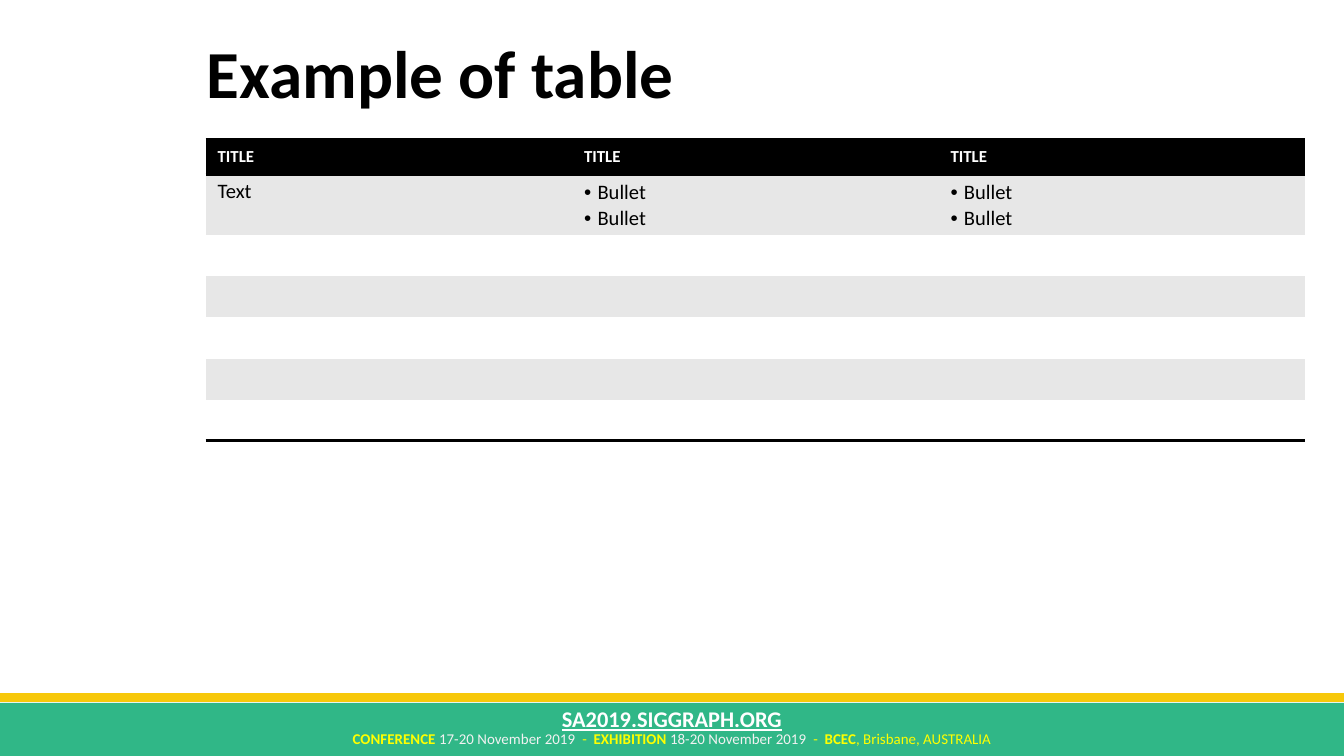
"""Build the table example slide with its conference footer."""
import pptx
import pptx.dml.color
import pptx.enum.shapes
import pptx.enum.text
import pptx.oxml
import pptx.oxml.ns
import pptx.util
from lxml import etree

RGBColor = pptx.dml.color.RGBColor
Inches = pptx.util.Inches
Pt = pptx.util.Pt
qn = pptx.oxml.ns.qn
MIDDLE = pptx.enum.text.MSO_ANCHOR.MIDDLE
CENTER = pptx.enum.text.PP_ALIGN.CENTER

BLACK = RGBColor(0x00, 0x00, 0x00)
WHITE = RGBColor(0xFF, 0xFF, 0xFF)
BAND = RGBColor(0xE7, 0xE7, 0xE7)
GREEN = RGBColor(0x30, 0xB7, 0x87)
GOLD = RGBColor(0xF7, 0xC8, 0x0A)
YELLOW = RGBColor(0xFF, 0xFF, 0x00)
PALE = RGBColor(0xF2, 0xF2, 0xF2)
PLAIN_TABLE = "{2D5ABB26-0587-4C30-8999-92F81FD0307C}"


def write(paragraph, text, size=11, color=BLACK, bold=False, underline=None, bullet=False):
    if bullet:
        properties = paragraph._p.get_or_add_pPr()
        properties.set("marL", str(Inches(0.1)))
        properties.set("indent", str(-Inches(0.1)))
        etree.SubElement(properties, qn("a:buFont")).set("typeface", "Arial")
        etree.SubElement(properties, qn("a:buChar")).set("char", "•")
    run = paragraph.add_run()
    run.text = text
    run.font.name = "Calibri"
    run.font.size = Pt(size)
    run.font.bold = bold
    run.font.underline = underline
    run.font.color.rgb = color


def add_border(cell, side):
    border = pptx.oxml.parse_xml(
        f'<a:{side} {pptx.oxml.ns.nsdecls("a")} w="{Pt(2)}">'
        f'<a:solidFill><a:srgbClr val="{BLACK}"/></a:solidFill></a:{side}>')
    properties = cell._tc.get_or_add_tcPr()
    properties.insert(len(properties.findall(qn("a:lnT"))), border)


deck = pptx.Presentation()
deck.slide_width = Inches(10)
deck.slide_height = deck.slide_width * 9 // 16
slide = deck.slides.add_slide(deck.slide_layouts[5])
shapes = slide.shapes

heading = shapes.title
heading.left, heading.top = Inches(1.54), Inches(0.22)
heading.width, heading.height = Inches(8.18), Inches(0.7)
heading_frame = heading.text_frame
heading_frame.margin_left = heading_frame.margin_right = 0
heading_frame.margin_top = heading_frame.margin_bottom = 0
heading_frame.vertical_anchor = MIDDLE
heading_frame.paragraphs[0].alignment = pptx.enum.text.PP_ALIGN.LEFT
heading_frame.paragraphs[0].line_spacing = 0.9
write(heading_frame.paragraphs[0], "Example of table", size=36, bold=True)

band_top = Inches(5.23)
footer_band = shapes.add_shape(pptx.enum.shapes.MSO_SHAPE.RECTANGLE, 0, band_top,
                               deck.slide_width, deck.slide_height - band_top)
footer_band.shadow.inherit = False
footer_band.fill.solid()
footer_band.fill.fore_color.rgb = GREEN
footer_band.line.fill.background()

dates = [
    ("CONFERENCE ", YELLOW, True), ("17-20 November 2019", PALE, False),
    ("  -  ", YELLOW, False), ("EXHIBITION ", YELLOW, True),
    ("18-20 November 2019  ", PALE, False), ("-  ", YELLOW, False),
    ("BCEC", YELLOW, True), (", Brisbane, AUSTRALIA", YELLOW, False),
]
address = [("SA2019.SIGGRAPH.ORG", WHITE, True)]
for top, height, size, underline, pieces in [(5.38, 0.24, 8, None, dates),
                                             (5.2, 0.3, 12, True, address)]:
    footer_line = shapes.add_textbox(Inches(0.28), Inches(top), Inches(9.44), Inches(height))
    footer_line.text_frame.word_wrap = True
    footer_line.text_frame.paragraphs[0].alignment = CENTER
    for text, color, bold in pieces:
        write(footer_line.text_frame.paragraphs[0], text, size=size, color=color,
              bold=bold, underline=underline)

gold_rule = shapes.add_connector(pptx.enum.shapes.MSO_CONNECTOR.STRAIGHT,
                                 0, Inches(5.19), deck.slide_width, Inches(5.19))
gold_rule.line.color.rgb = GOLD
gold_rule.line.width = Pt(5)
etree.SubElement(gold_rule._element.spPr, qn("a:effectLst"))

table_height, header_height, text_height = 2.24, 0.26, 0.45
empty_height = (table_height - header_height - text_height) / 5
row_heights = [header_height, text_height] + [empty_height] * 5
content = [["TITLE"] * 3, ["Text", "Bullet\nBullet", "Bullet\nBullet"]] + [[""] * 3] * 5
example = shapes.add_table(len(content), 3, Inches(1.53), Inches(1.04),
                           Inches(8.18), Inches(table_height)).table
example._tbl.tblPr.find(qn("a:tableStyleId")).text = PLAIN_TABLE
for row, (height, texts) in enumerate(zip(row_heights, content)):
    example.rows[row].height = Inches(height)
    header = row == 0
    for column, text in enumerate(texts):
        cell = example.cell(row, column)
        cell.margin_left = Inches(0.09)
        cell.margin_right = Inches(0.03 if text == "Text" else 0.09)
        cell.margin_top = cell.margin_bottom = Inches(0.03 if text == "Text" else 0.04)
        cell.fill.solid()
        cell.fill.fore_color.rgb = BLACK if header else BAND if row % 2 else WHITE
        if header:
            cell.vertical_anchor = MIDDLE
            add_border(cell, "lnT")
        if header or row == len(content) - 1:
            add_border(cell, "lnB")
        for index, line in enumerate(text.split("\n")):
            frame = cell.text_frame
            paragraph = frame.add_paragraph() if index else frame.paragraphs[0]
            if line:
                write(paragraph, line, size=9 if header else 11,
                      color=WHITE if header else BLACK, bold=header, bullet=line == "Bullet")
            else:
                etree.SubElement(paragraph._p, qn("a:endParaRPr")).set("sz", "1100")

deck.save("out.pptx")
